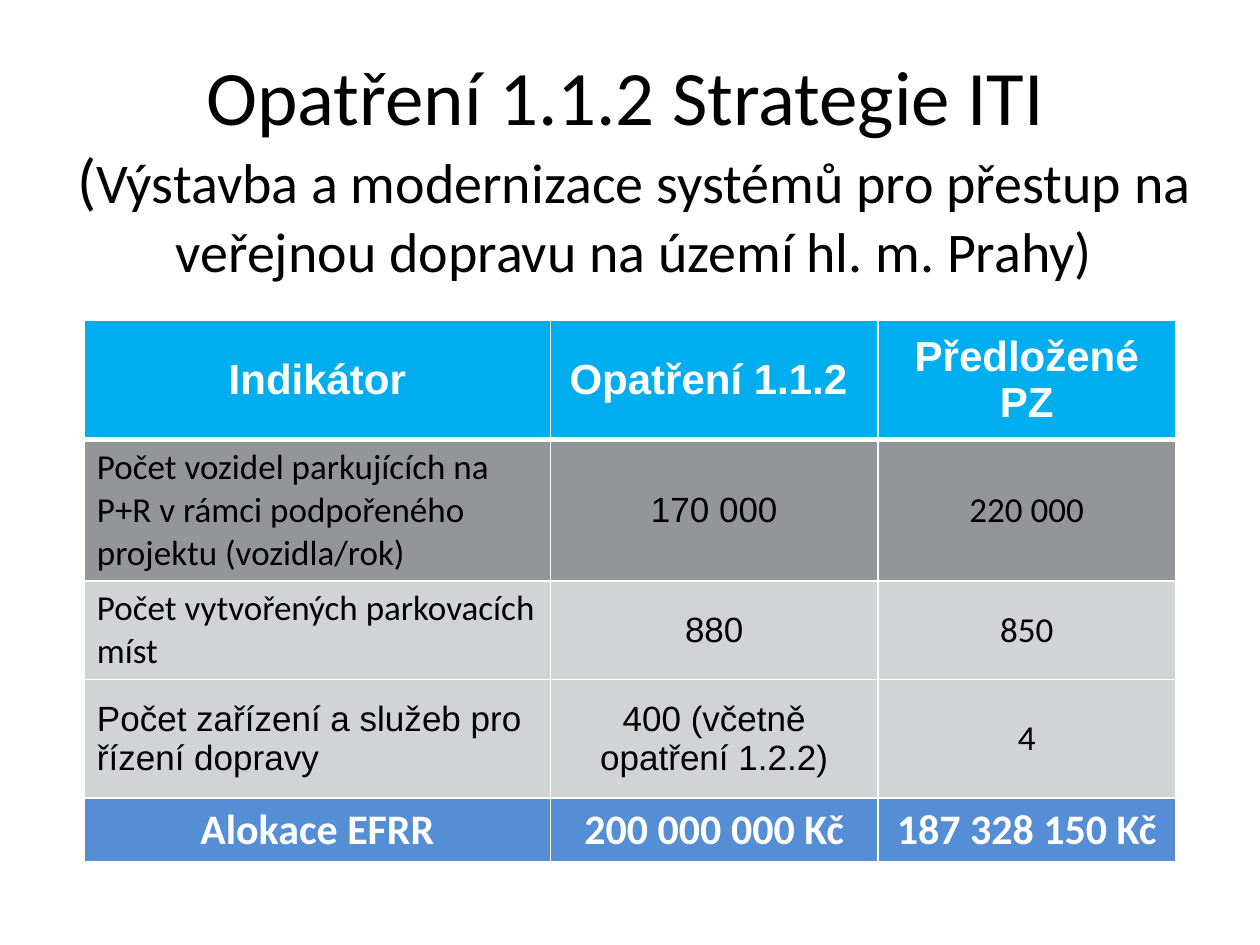
from lxml.etree import SubElement
from pptx import Presentation
from pptx.dml.color import RGBColor
from pptx.enum.text import MSO_ANCHOR as Anchor, MSO_AUTO_SIZE as AutoSize, PP_ALIGN as Align
from pptx.oxml.ns import qn
from pptx.util import Pt

COLORS = {
    "text": "000000", "light": "FFFFFF", "header": "00AEEF",
    "dark_row": "939598", "pale_row": "D1D3D4", "total": "558ED5",
}
TITLE = "Opatření 1.1.2 Strategie ITI "
SUBTITLE = [
    ("(", 36),
    ("Výstavba a modernizace systémů pro přestup na veřejnou dopravu na území hl. m. Prahy)", 32),
]
# Row kind, height, cell texts, cell fonts
ROWS = [
    ("header", 68.4, ("Indikátor", "Opatření 1.1.2 ", "Předložené PZ"),
     ("Arial", "Arial", "Arial")),
    ("dark_row", 58.3,
     ("Počet vozidel parkujících na P+R v rámci podpořeného projektu (vozidla/rok)",
      "170 000", "220 000"),
     ("Calibri", "Arial", "Calibri")),
    ("pale_row", 56.2, ("Počet vytvořených parkovacích míst", "880", "850"),
     ("Calibri", "Arial", "Calibri")),
    ("pale_row", 67.7,
     ("Počet zařízení a služeb pro řízení dopravy", "400 (včetně opatření 1.2.2)", "4"),
     ("Arial", "Arial", "Calibri")),
    ("total", 33.1, ("Alokace EFRR", "200 000 000 Kč", "187 328 150 Kč"),
     ("Calibri", "Calibri", "Calibri")),
]
COLUMN_WIDTHS = [266.4, 187.2, 169.9]
TABLE_LEFT, TABLE_TOP = 48.2, 182.9


def rgb(name):
    return RGBColor.from_string(COLORS[name])


def add_run(paragraph, text, size, font="Calibri", color="text", bold=False):
    run = paragraph.add_run()
    run.text = text
    run.font.size = Pt(size)
    run.font.name = font
    run.font.bold = bold
    run.font.color.rgb = rgb(color)


def set_borders(cell, widths):
    """Draw white cell edges; widths maps L, R, T, B to points."""
    properties = cell._tc.get_or_add_tcPr()
    for position, (side, width) in enumerate(widths.items()):
        line = properties.makeelement(qn(f"a:ln{side}"), {"w": str(Pt(width))})
        fill = SubElement(line, qn("a:solidFill"))
        SubElement(fill, qn("a:srgbClr"), val=COLORS["light"])
        properties.insert(position, line)


def add_title(slide):
    title = slide.shapes.title
    title.left, title.top, title.width, title.height = Pt(25.2), Pt(21.6), Pt(674.6), Pt(146.2)
    frame = title.text_frame
    frame.word_wrap = True
    frame.auto_size = AutoSize.NONE
    frame.vertical_anchor = Anchor.MIDDLE
    paragraph = frame.paragraphs[0]
    paragraph.alignment = Align.CENTER
    add_run(paragraph, TITLE, 44)
    paragraph.add_line_break()
    for text, size in SUBTITLE:
        add_run(paragraph, text, size)


def add_indicator_table(slide):
    heights = [height for _, height, _, _ in ROWS]
    table = slide.shapes.add_table(
        len(ROWS), len(COLUMN_WIDTHS), Pt(TABLE_LEFT), Pt(TABLE_TOP),
        Pt(sum(COLUMN_WIDTHS)), Pt(sum(heights))).table
    for column, width in zip(table.columns, COLUMN_WIDTHS):
        column.width = Pt(width)

    for r, (kind, height, texts, fonts) in enumerate(ROWS):
        table.rows[r].height = Pt(height)
        emphasized = kind in ("header", "total")
        edges = {"L": 1, "R": 1, "T": 3 if r == 1 else 1, "B": 3 if r == 0 else 1}
        for c, (text, font) in enumerate(zip(texts, fonts)):
            cell = table.cell(r, c)
            cell.vertical_anchor = Anchor.MIDDLE
            cell.fill.solid()
            cell.fill.fore_color.rgb = rgb(kind)
            set_borders(cell, edges)
            if c == 2 and not emphasized:
                cell.margin_left = cell.margin_right = cell.margin_top = cell.margin_bottom = 0
            paragraph = cell.text_frame.paragraphs[0]
            paragraph.alignment = Align.CENTER if emphasized or c else Align.LEFT
            add_run(paragraph, text, 24 if emphasized else 20, font,
                    "light" if emphasized else "text", emphasized)


def main():
    presentation = Presentation()
    presentation.slide_width, presentation.slide_height = Pt(720), Pt(540)
    slide = presentation.slides.add_slide(presentation.slide_layouts[5])
    add_title(slide)
    add_indicator_table(slide)
    presentation.save("out.pptx")


if __name__ == "__main__":
    main()
